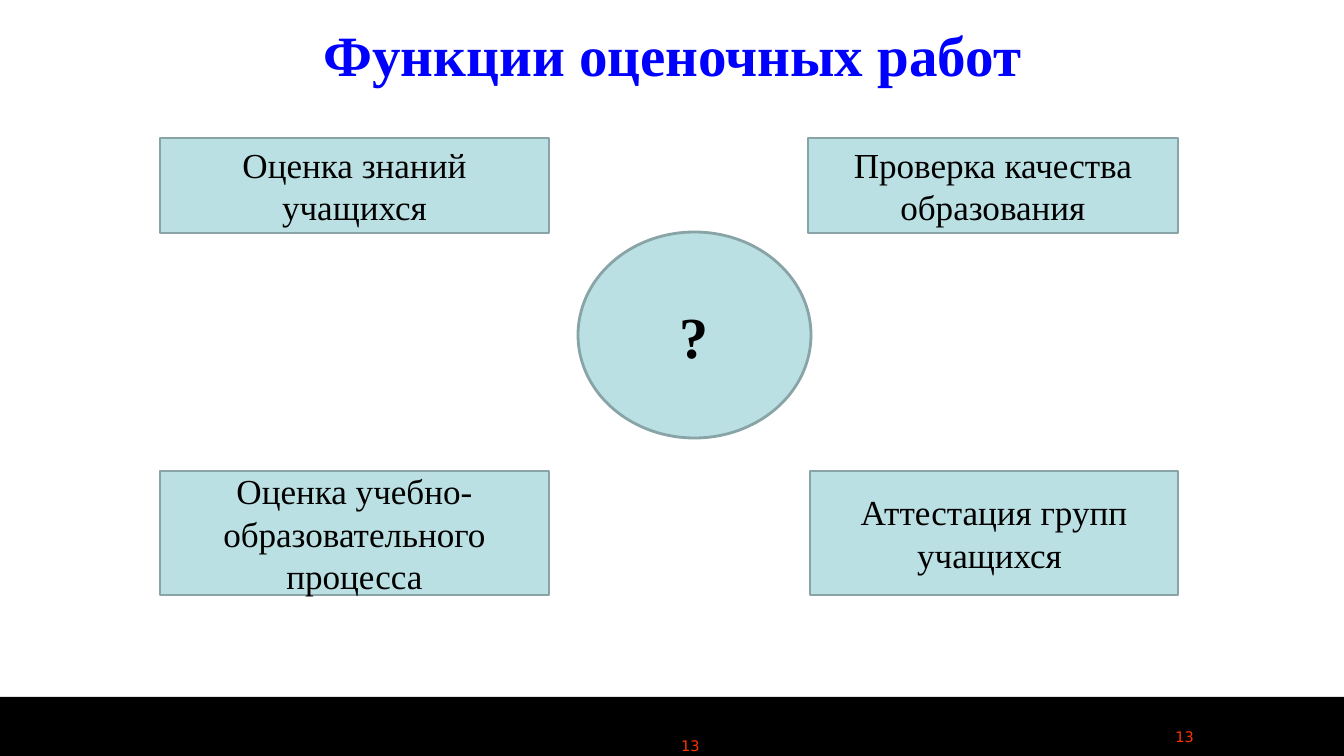
from pptx import Presentation
from pptx import util as u
from pptx.dml.color import RGBColor
from pptx.enum import shapes, text

SCALE = 914400 / 100.8
WIDTH, HEIGHT = 1344, 756
BLACK = RGBColor(0x00, 0x00, 0x00)
BLUE = RGBColor(0x00, 0x00, 0xFF)
RED = RGBColor(0xFF, 0x33, 0x00)
TEAL = RGBColor(0xBB, 0xE0, 0xE3)
EDGE = RGBColor(0x89, 0xA4, 0xA7)
SERIF = "Times New Roman"
SANS = "DejaVu Sans"
RECT = shapes.MSO_SHAPE.RECTANGLE
OVAL = shapes.MSO_SHAPE.OVAL
CENTER = text.PP_ALIGN.CENTER
RIGHT = text.PP_ALIGN.RIGHT
TOP = text.MSO_ANCHOR.TOP
MIDDLE = text.MSO_ANCHOR.MIDDLE


def px(*sizes):
    return [u.Emu(round(size * SCALE)) for size in sizes]


def write(shape, words, size, color, font=SERIF, bold=False,
          align=CENTER, anchor=MIDDLE, inset=(9, 4)):
    frame = shape.text_frame
    frame.word_wrap = True
    frame.auto_size = text.MSO_AUTO_SIZE.NONE
    frame.vertical_anchor = anchor
    side, edge = px(*inset)
    frame.margin_left = frame.margin_right = side
    frame.margin_top = frame.margin_bottom = edge
    para = frame.paragraphs[0]
    para.alignment = align
    run = para.add_run()
    run.text = words
    run.font.size = u.Pt(size)
    run.font.name = font
    run.font.bold = bold
    run.font.color.rgb = color


def draw(slide, kind, box, fill, edge=None):
    shape = slide.shapes.add_shape(kind, *px(*box))
    shape.shadow.inherit = False
    shape.fill.solid()
    shape.fill.fore_color.rgb = fill
    if edge is None:
        shape.line.fill.background()
    else:
        shape.line.color.rgb = edge
        shape.line.width = u.Pt(2)
    return shape


def footer(slide, box):
    left, top, wide, high = box
    draw(slide, RECT, box, BLACK)
    for x, y, w, align, inset in ((406, 34, 569, CENTER, (12, 6)),
                                  (1027, 26, 177, RIGHT, (10, 5))):
        label = slide.shapes.add_textbox(*px(left + x, top + y, w, high - y))
        write(label, "13", 10.4, RED, SANS, align=align, anchor=TOP, inset=inset)


def header(slide, box):
    title = slide.shapes.title
    title.left, title.top, title.width, title.height = px(*box)
    write(title, "Функции оценочных работ", 40.7, BLUE, bold=True, inset=(10, 5))


def diagram(slide, box):
    left, top, wide, high = box
    hub = draw(slide, OVAL, (left + 418, top + 94, 233, 206), TEAL, EDGE)
    write(hub, "?", 41.5, BLACK, bold=True)
    upper, lower = 95, 124
    cards = (
        ("Оценка знаний учащихся", 0, 0, 389, upper),
        ("Оценка учебно-образовательного процесса", 0, high - lower, 389, lower),
        ("Аттестация групп учащихся ", wide - 368, high - lower, 368, lower),
        ("Проверка качества образования", wide - 370, 0, 370, upper),
    )
    for words, x, y, w, h in cards:
        card = draw(slide, RECT, (left + x, top + y, w, h), TEAL, EDGE)
        write(card, words, 25.1, BLACK)


def main():
    deck = Presentation()
    deck.slide_width, deck.slide_height = px(WIDTH, HEIGHT)
    slide = deck.slides.add_slide(deck.slide_layouts[5])
    footer(slide, (0, 697, WIDTH, 59))
    header(slide, (193, 14, 959, 79))
    diagram(slide, (160, 138, 1018, 457))
    deck.save("out.pptx")


if __name__ == "__main__":
    main()
